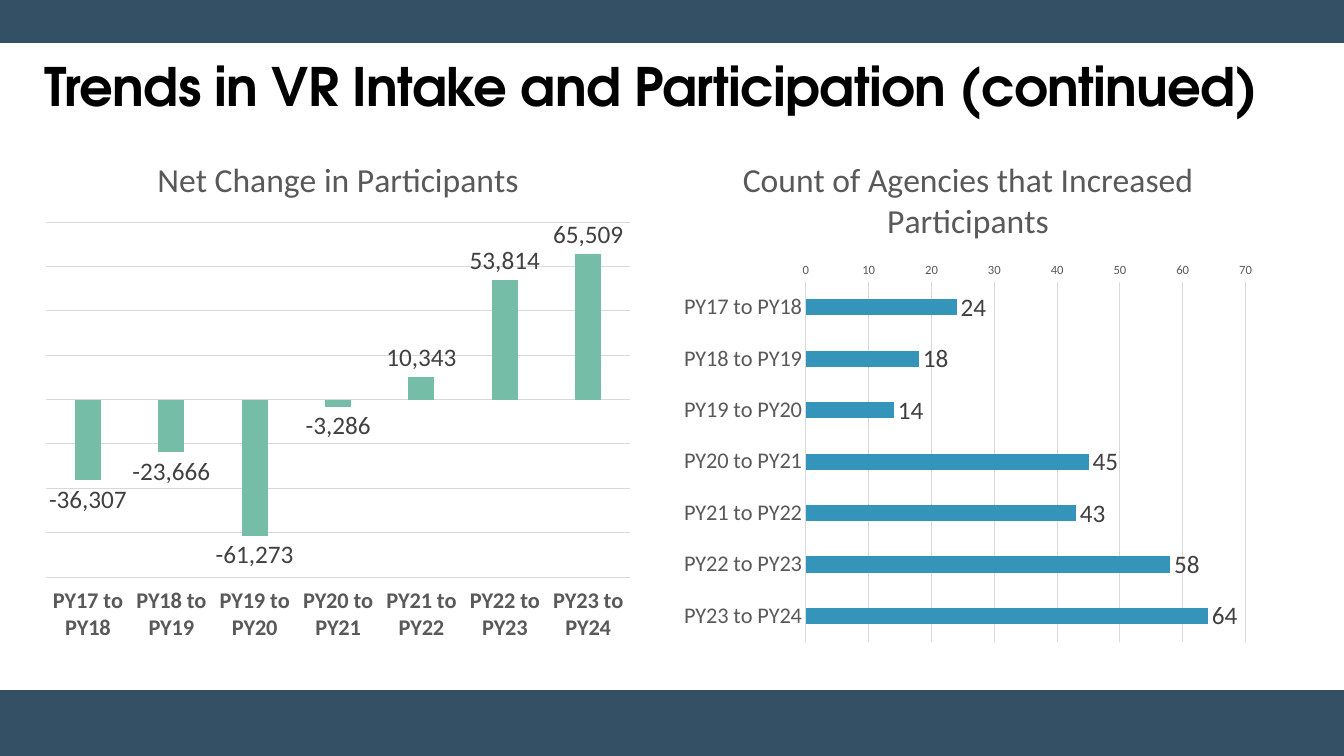
from dataclasses import dataclass
from typing import Any

from pptx import Presentation
from pptx.chart.data import CategoryChartData
from pptx.dml.color import RGBColor
from pptx.enum.chart import XL_CHART_TYPE, XL_LABEL_POSITION, XL_TICK_LABEL_POSITION, XL_TICK_MARK
from pptx.enum.shapes import MSO_SHAPE
from pptx.enum.text import MSO_ANCHOR, MSO_AUTO_SIZE, PP_ALIGN
from pptx.util import Cm, Pt

COLUMN, BAR = XL_CHART_TYPE.COLUMN_CLUSTERED, XL_CHART_TYPE.BAR_CLUSTERED
OUTSIDE_END = XL_LABEL_POSITION.OUTSIDE_END
LABELS_LOW = XL_TICK_LABEL_POSITION.LOW
LABELS_BESIDE_AXIS = XL_TICK_LABEL_POSITION.NEXT_TO_AXIS
NO_TICKS = XL_TICK_MARK.NONE
RECTANGLE = MSO_SHAPE.RECTANGLE
MIDDLE, LEFT, NO_AUTOFIT = MSO_ANCHOR.MIDDLE, PP_ALIGN.LEFT, MSO_AUTO_SIZE.NONE

SLIDE_WIDTH, SLIDE_HEIGHT = 33.87, 19.05
PERIODS = [f"PY{year} to PY{year + 1}" for year in range(17, 24)]


@dataclass(frozen=True)
class Theme:
    band: str = "345065"
    title: str = "000000"
    text: str = "595959"
    value: str = "404040"
    rule: str = "D9D9D9"
    green: str = "75BDA7"
    blue: str = "3494BA"
    title_font: str = "TeX Gyre Adventor"
    chart_font: str = "Calibri"
    title_size: float = 37.8
    chart_title_size: float = 24
    value_size: float = 18
    category_size: float = 16
    base_size: float = 10
    scale_size: float = 9


THEME = Theme()


@dataclass(frozen=True)
class Band:
    top: float
    height: float


@dataclass(frozen=True)
class ChartPanel:
    title: str
    kind: Any
    left: float
    width: float
    values: tuple[int, ...]
    color: str
    minimum: int
    maximum: int
    step: int
    number_format: str
    overlap: int
    bold_categories: bool
    show_scale: bool
    reverse_categories: bool
    category_labels: Any


BANDS = [Band(0, 1.07), Band(17.4, 1.65)]
PANELS = [
    ChartPanel(
        "Net Change in Participants", COLUMN, 0.86, 15.32,
        (-36307, -23666, -61273, -3286, 10343, 53814, 65509), THEME.green,
        -80000, 80000, 20000, "#,##0", -27,
        bold_categories=True, show_scale=False, reverse_categories=False,
        category_labels=LABELS_LOW,
    ),
    ChartPanel(
        "Count of Agencies that Increased Participants", BAR, 16.94, 14.91,
        (24, 18, 14, 45, 43, 58, 64), THEME.blue,
        0, 70, 10, "General", 0,
        bold_categories=False, show_scale=True, reverse_categories=True,
        category_labels=LABELS_BESIDE_AXIS,
    ),
]


def set_attributes(target: Any, values: dict[str, Any]) -> None:
    for name, value in values.items():
        setattr(target, name, value)


def style_font(font: Any, size: float, color: str, bold: bool = False,
               name: str = THEME.chart_font) -> None:
    set_attributes(font, {"name": name, "size": Pt(size), "bold": bold})
    font.color.rgb = RGBColor.from_string(color)


def style_line(line: Any, color: str, width: float) -> None:
    line.color.rgb = RGBColor.from_string(color)
    line.width = Pt(width)


def add_band(slide: Any, band: Band) -> None:
    shape = slide.shapes.add_shape(
        RECTANGLE, 0, Cm(band.top), Cm(SLIDE_WIDTH), Cm(band.height))
    shape.shadow.inherit = False
    shape.fill.solid()
    shape.fill.fore_color.rgb = RGBColor.from_string(THEME.band)
    style_line(shape.line, THEME.band, 1)


def add_title(slide: Any, text: str) -> None:
    title = slide.shapes.title
    set_attributes(title, {"left": Cm(0.86), "top": Cm(1.15),
                           "width": Cm(31.83), "height": Cm(2.2)})
    set_attributes(title.text_frame, {"word_wrap": True, "auto_size": NO_AUTOFIT,
                                      "vertical_anchor": MIDDLE})
    paragraph = title.text_frame.paragraphs[0]
    set_attributes(paragraph, {"alignment": LEFT, "line_spacing": 0.9})
    run = paragraph.add_run()
    run.text = text
    style_font(run.font, THEME.title_size, THEME.title, True, THEME.title_font)
    run._r.get_or_add_rPr().set("spc", "-50")


def style_axes(chart: Any, panel: ChartPanel) -> None:
    category_axis, value_axis = chart.category_axis, chart.value_axis
    set_attributes(category_axis, {
        "major_tick_mark": NO_TICKS, "minor_tick_mark": NO_TICKS,
        "has_major_gridlines": False, "reverse_order": panel.reverse_categories,
        "tick_label_position": panel.category_labels})
    style_font(category_axis.tick_labels.font, THEME.category_size, THEME.text,
               panel.bold_categories)
    style_line(category_axis.format.line, THEME.rule, 0.75)

    set_attributes(value_axis, {
        "major_tick_mark": NO_TICKS, "minor_tick_mark": NO_TICKS,
        "has_major_gridlines": True, "visible": panel.show_scale,
        "minimum_scale": panel.minimum, "maximum_scale": panel.maximum,
        "major_unit": panel.step})
    set_attributes(value_axis.tick_labels, {
        "number_format": panel.number_format, "number_format_is_linked": False})
    style_font(value_axis.tick_labels.font, THEME.scale_size, THEME.text)
    value_axis.format.line.fill.background()
    style_line(value_axis.major_gridlines.format.line, THEME.rule, 0.75)


def add_chart_panel(slide: Any, panel: ChartPanel) -> None:
    data = CategoryChartData(number_format=panel.number_format)
    data.categories = PERIODS
    data.add_series(panel.title, panel.values)
    chart = slide.shapes.add_chart(
        panel.kind, Cm(panel.left), Cm(3.4), Cm(panel.width), Cm(13.03), data).chart
    style_font(chart.font, THEME.base_size, THEME.title)
    set_attributes(chart, {"has_legend": False, "has_title": True})

    # Chart title
    chart.chart_title.include_in_layout = False
    paragraph = chart.chart_title.text_frame.paragraphs[0]
    run = paragraph.add_run()
    run.text = panel.title
    style_font(run.font, THEME.chart_title_size, THEME.text)

    # Bars and their values
    plot = chart.plots[0]
    set_attributes(plot, {"gap_width": 219, "overlap": panel.overlap,
                          "vary_by_categories": False, "has_data_labels": True})
    set_attributes(plot.data_labels, {
        "show_value": True, "position": OUTSIDE_END,
        "number_format": panel.number_format, "number_format_is_linked": False})
    style_font(plot.data_labels.font, THEME.value_size, THEME.value)
    series = plot.series[0]
    series.invert_if_negative = False
    series.format.fill.solid()
    series.format.fill.fore_color.rgb = RGBColor.from_string(panel.color)

    style_axes(chart, panel)


def main() -> None:
    presentation = Presentation()
    set_attributes(presentation, {"slide_width": Cm(SLIDE_WIDTH),
                                  "slide_height": Cm(SLIDE_HEIGHT)})
    title_only = presentation.slide_layouts.get_by_name("Title Only")
    slide = presentation.slides.add_slide(title_only)

    for band in BANDS:
        add_band(slide, band)
    add_title(slide, "Trends in VR Intake and Participation (continued)")
    for panel in PANELS:
        add_chart_panel(slide, panel)
    presentation.save("out.pptx")


if __name__ == "__main__":
    main()
